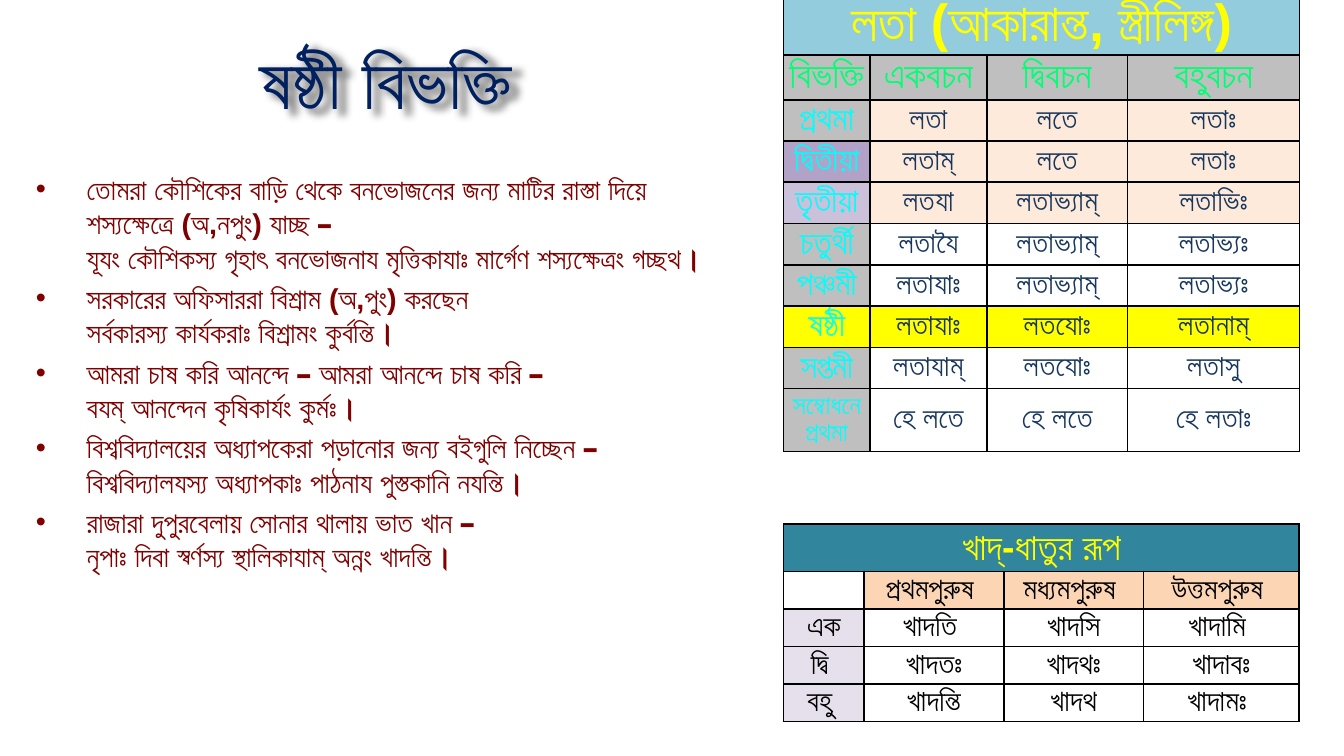
import pptx
import pptx.util
import pptx.dml.color
import pptx.enum.text
import pptx.oxml
import pptx.oxml.ns
from pptx.util import Cm

NS = pptx.oxml.ns.nsdecls("a")
ALIGN = pptx.enum.text.PP_ALIGN
MIDDLE = pptx.enum.text.MSO_ANCHOR.MIDDLE


def rgb(value):
    return pptx.dml.color.RGBColor.from_string(value)


def add_run(p, text, size, font, color, bold=False):
    r = p.add_run()
    r.text = text
    r.font.size = pptx.util.Pt(size)
    r.font.name = font
    r.font.bold = bold
    r.font.color.rgb = rgb(color)
    return r


prs = pptx.Presentation()
prs.slide_width, prs.slide_height = Cm(25.4), Cm(14.29)
s = prs.slides.add_slide(prs.slide_layouts[6])

# Title with a soft shadow
sp = s.shapes.add_textbox(Cm(2.11), Cm(0.53), Cm(10.36), Cm(1.96))
sp._element.spPr.append(pptx.oxml.parse_xml(
    f'<a:effectLst {NS}><a:outerShdw blurRad="50800" dist="50800" dir="2700000" algn="tl">'
    '<a:srgbClr val="000000"><a:alpha val="43000"/></a:srgbClr></a:outerShdw></a:effectLst>'))
tf = sp.text_frame
tf.word_wrap = True
tf.vertical_anchor = MIDDLE
p = tf.paragraphs[0]
p.alignment = ALIGN.CENTER
add_run(p, "ষষ্ঠী বিভক্তি", 40, "Arial", "002060", True)

# Bulleted sentences, each with its translation on a new line
sentences = [
    ("তোমরা কৌশিকের বাড়ি থেকে বনভোজনের জন্য মাটির রাস্তা দিয়ে শস্যক্ষেত্রে (অ,নপুং) যাচ্ছ –",
     "যূযং কৌশিকস্য গৃহাৎ বনভোজনায মৃত্তিকাযাঃ মার্গেণ শস্যক্ষেত্রং গচ্ছথ।"),
    ("সরকারের অফিসাররা বিশ্রাম (অ,পুং) করছেন",
     "সর্বকারস্য কার্যকরাঃ বিশ্রামং কুর্বন্তি।"),
    ("আমরা চাষ করি আনন্দে – আমরা আনন্দে চাষ করি –",
     "বযম্ আনন্দেন কৃষিকার্যং কুর্মঃ।"),
    ("বিশ্ববিদ্যালয়ের অধ্যাপকেরা পড়ানোর জন্য বইগুলি নিচ্ছেন –",
     "বিশ্ববিদ্যালযস্য অধ্যাপকাঃ পাঠনায পুস্তকানি নযন্তি।"),
    ("রাজারা দুপুরবেলায় সোনার থালায় ভাত খান –",
     "নৃপাঃ দিবা স্বর্ণস্য স্থালিকাযাম্ অন্নং খাদন্তি।"),
]
tf = s.shapes.add_textbox(Cm(0.43), Cm(3.12), Cm(13.54), Cm(10.8)).text_frame
tf.word_wrap = True
for i, (bengali, sanskrit) in enumerate(sentences):
    p = tf.paragraphs[0] if i == 0 else tf.add_paragraph()
    p.space_before = pptx.util.Pt(3)
    pPr = p._p.get_or_add_pPr()
    pPr.set("marL", str(Cm(0.96)))
    pPr.set("indent", str(-Cm(0.96)))
    pPr.append(pptx.oxml.parse_xml(f'<a:buFont {NS} typeface="Arial"/>'))
    pPr.append(pptx.oxml.parse_xml(f'<a:buChar {NS} char="•"/>'))
    add_run(p, bengali, 15.4, "Arial", "800000", True)
    p.add_line_break()
    add_run(p, sanskrit, 15.4, "Arial", "800000", True)

# Declension rows: text, label fill, data fill
GREY, PEACH, WHITE, YELLOW = "BFBFBF", "FDEADA", "FFFFFF", "FFFF00"
noun_rows = [
    (["লতা (আকারান্ত, স্ত্রীলিঙ্গ)", "", "", ""], "93CDDD", "93CDDD"),
    (["বিভক্তি", "একবচন", "দ্বিবচন", "বহুবচন"], GREY, GREY),
    (["প্রথমা", "লতা", "লতে", "লতাঃ"], GREY, PEACH),
    (["দ্বিতীয়া", "লতাম্", "লতে", "লতাঃ"], "B3A2C7", PEACH),
    (["তৃতীয়া", "লতযা", "লতাভ্যাম্", "লতাভিঃ"], "CCC1DA", PEACH),
    (["চতুর্থী", "লতাযৈ", "লতাভ্যাম্", "লতাভ্যঃ"], GREY, WHITE),
    (["পঞ্চমী", "লতাযাঃ", "লতাভ্যাম্", "লতাভ্যঃ"], GREY, WHITE),
    (["ষষ্ঠী", "লতাযাঃ", "লতযোঃ", "লতানাম্"], YELLOW, YELLOW),
    (["সপ্তমী", "লতাযাম্", "লতযোঃ", "লতাসু"], GREY, WHITE),
    (["সম্বোধনে প্রথমা", "হে লতে", "হে লতে", "হে লতাঃ"], GREY, WHITE),
]
# Conjugation rows
verb_rows = [
    (["খাদ্-ধাতুর রূপ", "", "", ""], "31859C", "31859C"),
    (["", "প্রথমপুরুষ ", "মধ্যমপুরুষ ", "উত্তমপুরুষ "], WHITE, "FCD5B5"),
    (["এক", "খাদতি ", "খাদসি", "খাদামি "], "E6E0EC", WHITE),
    (["দ্বি ", "খাদতঃ", "খাদথঃ", "খাদাবঃ"], "E6E0EC", WHITE),
    (["বহু ", "খাদন্তি", "খাদথ", "খাদামঃ "], "E6E0EC", WHITE),
]
tables = [
    ("noun", noun_rows, -0.15, [1.63, 2.21, 2.66, 3.25], [1.1, 0.82] + [0.78] * 7 + [1.1], 0),
    ("verb", verb_rows, 9.9, [1.52, 2.64, 2.64, 2.94], [0.9] + [0.71] * 4, 0.18),
]

for name, rows, top, widths, heights, margin in tables:
    tbl = s.shapes.add_table(len(rows), 4, Cm(14.81), Cm(top),
                             Cm(sum(widths)), Cm(sum(heights))).table
    for column, width in zip(tbl.columns, widths):
        column.width = Cm(width)
    for row, height in zip(tbl.rows, heights):
        row.height = Cm(height)
    for i, (texts, label_fill, data_fill) in enumerate(rows):
        for j, text in enumerate(texts):
            cell = tbl.cell(i, j)
            cell.vertical_anchor = MIDDLE
            cell.margin_left = cell.margin_right = Cm(margin)
            cell.margin_top = cell.margin_bottom = 0
            cell.fill.solid()
            cell.fill.fore_color.rgb = rgb(data_fill if j else label_fill)
            for k, side in enumerate(("lnL", "lnR", "lnT", "lnB")):
                cell._tc.get_or_add_tcPr().insert(k, pptx.oxml.parse_xml(
                    f'<a:{side} {NS} w="12700"><a:solidFill><a:srgbClr val="000000"/>'
                    f'</a:solidFill></a:{side}>'))
            p = cell.text_frame.paragraphs[0]
            if not text:
                # A small end mark keeps the row at its set height
                p._p.get_or_add_endParaRPr().set("sz", "1200")
                continue
            p.alignment = ALIGN.CENTER
            p.line_spacing = 1.0
            # Text style by table, row and column
            if i == 0:
                size, font, color, bold = (28 if name == "noun" else 20), "Arial", YELLOW, True
            elif name == "verb":
                size, font, color, bold = 16, "Arial", "000000", True
            elif i == 1:
                size, font, color, bold = 20, "Calibri", "01FF74", False
            elif j == 0:
                size = 14 if i == len(rows) - 1 else 18
                font, color, bold = "Calibri", "00FFFF", False
            else:
                size, font, color, bold = 16, "Calibri", "17365D", False
            r = add_run(p, text, size, font, color, bold)
            if name == "noun" and i > 1 and j:
                r._r.get_or_add_rPr().set("spc", "20")
    tbl.cell(0, 0).merge(tbl.cell(0, 3))

prs.save("out.pptx")
